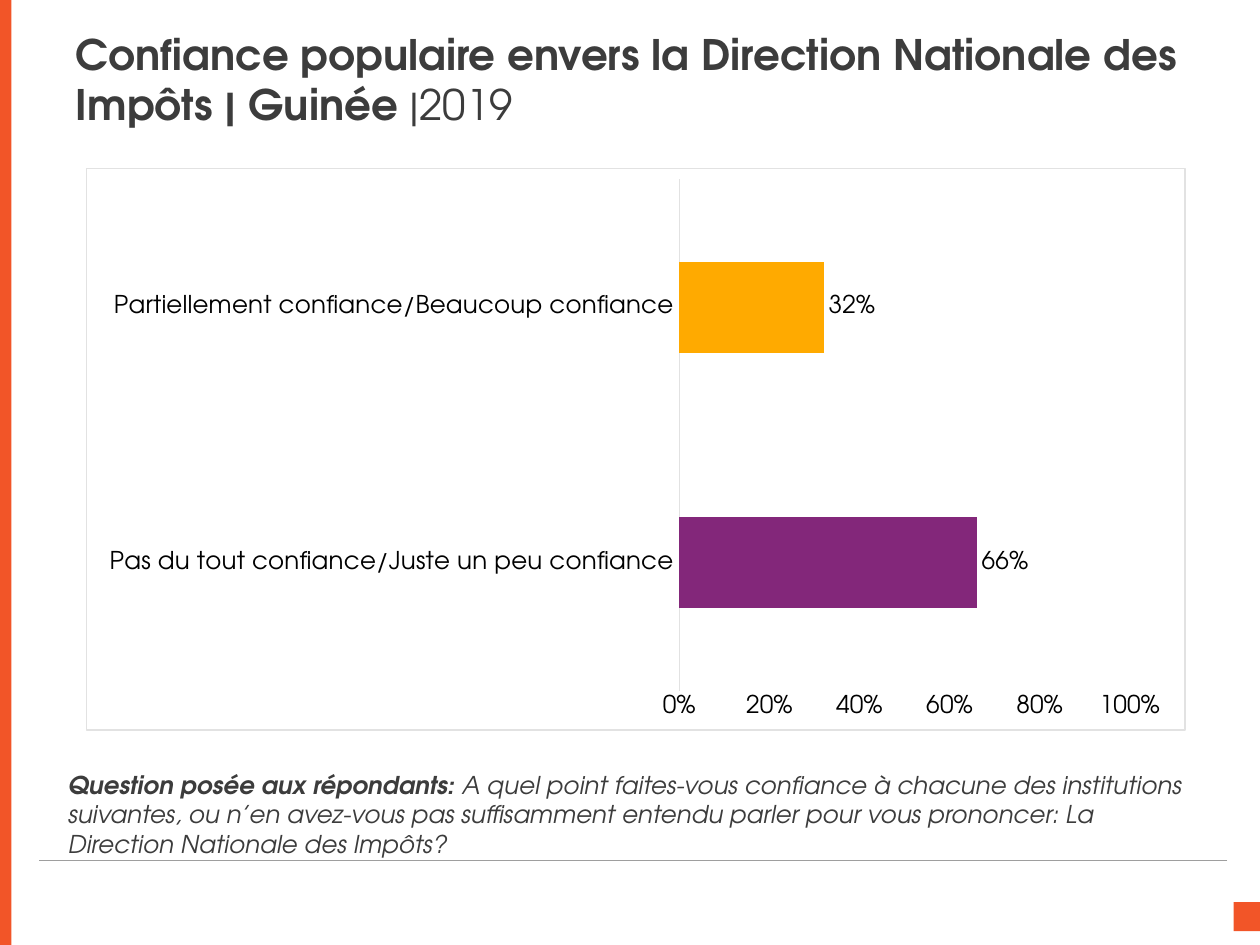
from lxml import etree
from pptx import Presentation
from pptx.chart.data import CategoryChartData
from pptx.dml.color import RGBColor
from pptx.enum import chart as charts, shapes, text
from pptx.oxml import parse_xml
from pptx.oxml.ns import nsdecls, qn
from pptx.util import Inches, Pt

FONT = "TeX Gyre Adventor"
ORANGE, DARK, PALE = "F25528", "3C3C3C", "E2E2E2"


def color(value):
    return RGBColor.from_string(value)


def style_font(font, size, value):
    font.name = FONT
    font.size = Pt(size)
    font.color.rgb = color(value)


def place(shape, left, top, width, height):
    shape.left, shape.top = Inches(left), Inches(top)
    shape.width, shape.height = Inches(width), Inches(height)


def add_block(slide, left, top, width, height):
    block = slide.shapes.add_shape(
        shapes.MSO_SHAPE.RECTANGLE,
        Inches(left), Inches(top), Inches(width), Inches(height))
    block.shadow.inherit = False
    block.fill.solid()
    block.fill.fore_color.rgb = color(ORANGE)
    block.line.fill.background()


def add_rule(slide, start, end, y):
    rule = slide.shapes.add_connector(
        shapes.MSO_CONNECTOR.STRAIGHT,
        Inches(start), Inches(y), Inches(end), Inches(y))
    rule.line.color.rgb = color("9E9E9E")
    rule.line.width = Pt(0.25)
    etree.SubElement(rule.element.spPr, qn("a:effectLst"))


def write_placeholder(holder, box, anchor, size, strong, plain):
    place(holder, *box)
    frame = holder.text_frame
    frame.word_wrap = True
    frame.auto_size = text.MSO_AUTO_SIZE.NONE
    frame.vertical_anchor = anchor
    paragraph = frame.paragraphs[0]
    properties = paragraph._p.get_or_add_pPr()
    properties.set("marL", "0")
    properties.set("indent", "0")
    etree.SubElement(properties, qn("a:buNone"))
    paragraph.alignment = text.PP_ALIGN.LEFT
    paragraph.space_before = Pt(0)
    style_font(paragraph.font, size, DARK)
    for words, bold in ((strong, True), (plain, False)):
        run = paragraph.add_run()
        run.text = words
        run.font.bold = bold
    return paragraph


def frame_chart(chart):
    border = parse_xml(
        f'<c:spPr {nsdecls("c", "a")}>'
        '<a:solidFill><a:srgbClr val="FFFFFF"/></a:solidFill>'
        f'<a:ln w="9525"><a:solidFill><a:srgbClr val="{PALE}"/></a:solidFill></a:ln>'
        '</c:spPr>')
    chart.element.find(qn("c:chart")).addnext(border)


def position_plot(chart, **fractions):
    area = chart.element.find(".//" + qn("c:plotArea"))
    for old in area.findall(qn("c:layout")):
        area.remove(old)
    sizes = "".join(f'<c:{key} val="{value}"/>' for key, value in fractions.items())
    area.insert(0, parse_xml(
        f'<c:layout {nsdecls("c")}><c:manualLayout><c:layoutTarget val="inner"/>'
        f'<c:xMode val="edge"/><c:yMode val="edge"/>{sizes}</c:manualLayout></c:layout>'))


def add_trust_chart(slide):
    data = CategoryChartData(number_format="0%")
    data.categories = ["Pas du tout confiance/Juste un peu confiance",
                       "Partiellement confiance/Beaucoup confiance"]
    data.add_series("Series 1", (0.66, 0.32))
    chart = slide.shapes.add_chart(
        charts.XL_CHART_TYPE.BAR_CLUSTERED,
        Inches(0.68), Inches(1.33), Inches(8.73), Inches(4.47), data).chart
    chart.has_legend = False
    chart.has_title = False
    style_font(chart.font, 14, "000000")
    frame_chart(chart)
    position_plot(chart, x=0.54, y=0.02, w=0.41, h=0.91)

    answers, scale = chart.category_axis, chart.value_axis
    for axis in (answers, scale):
        axis.major_tick_mark = axis.minor_tick_mark = charts.XL_TICK_MARK.NONE
        axis.has_major_gridlines = False
    answers.format.line.color.rgb = color(PALE)
    answers.format.line.width = Pt(0.75)
    scale.format.line.fill.background()
    scale.minimum_scale, scale.maximum_scale, scale.major_unit = 0, 1, 0.2
    scale.tick_labels.number_format = "0%"
    scale.tick_labels.number_format_is_linked = False

    plot = chart.plots[0]
    plot.gap_width = 182
    plot.vary_by_categories = False
    series = plot.series[0]
    series.format.fill.solid()
    series.format.fill.fore_color.rgb = color(ORANGE)
    for index, value in enumerate(("83277A", "FFAA00")):
        fill = series.points[index].format.fill
        fill.solid()
        fill.fore_color.rgb = color(value)
    labels = series.data_labels
    labels.show_value = True
    labels.position = charts.XL_LABEL_POSITION.OUTSIDE_END
    labels.number_format = "0%"
    labels.number_format_is_linked = False


def main():
    deck = Presentation()
    deck.slide_width, deck.slide_height = Inches(10), Inches(7.5)
    slide = deck.slides.add_slide(deck.slide_layouts[1])
    add_block(slide, 9.79, 7.16, 0.22, 0.23)
    add_rule(slide, 9.74, 0.31, 6.83)
    add_block(slide, 0, 0, 0.09, 7.5)
    write_placeholder(
        slide.shapes.title, (0.5, 0.12, 9.22, 1.01), text.MSO_ANCHOR.MIDDLE, 24,
        "Confiance populaire envers la Direction Nationale des Impôts | Guinée ",
        "|2019")
    question = write_placeholder(
        slide.placeholders[1], (0.44, 6.06, 9.06, 0.69), text.MSO_ANCHOR.TOP, 14,
        "Question posée aux répondants: ",
        "A quel point faites-vous confiance à chacune des institutions suivantes, "
        "ou n’en avez-vous pas suffisamment entendu parler pour vous prononcer: "
        "La Direction Nationale des Impôts?")
    question.font.italic = True
    add_trust_chart(slide)
    deck.save("out.pptx")


if __name__ == "__main__":
    main()
